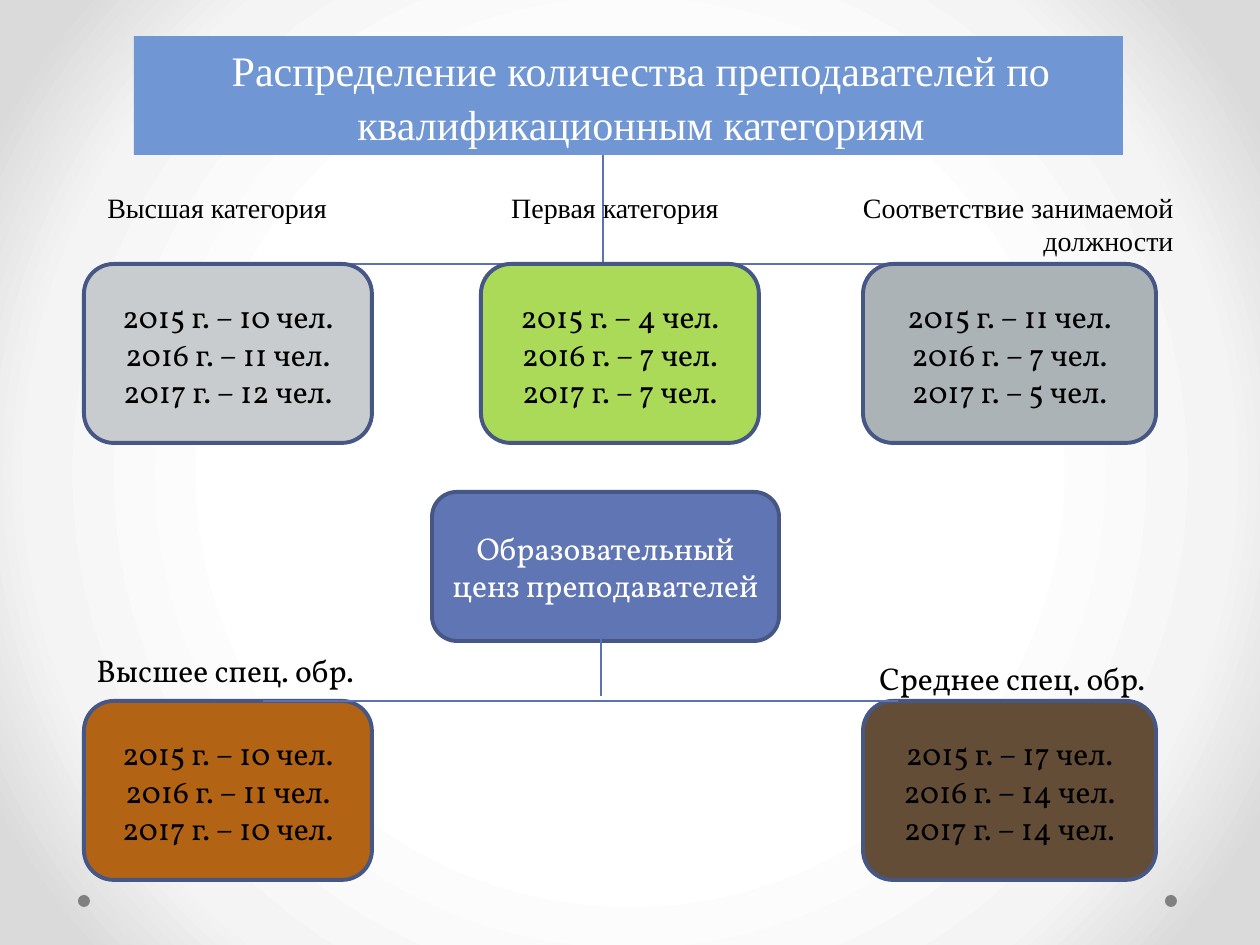
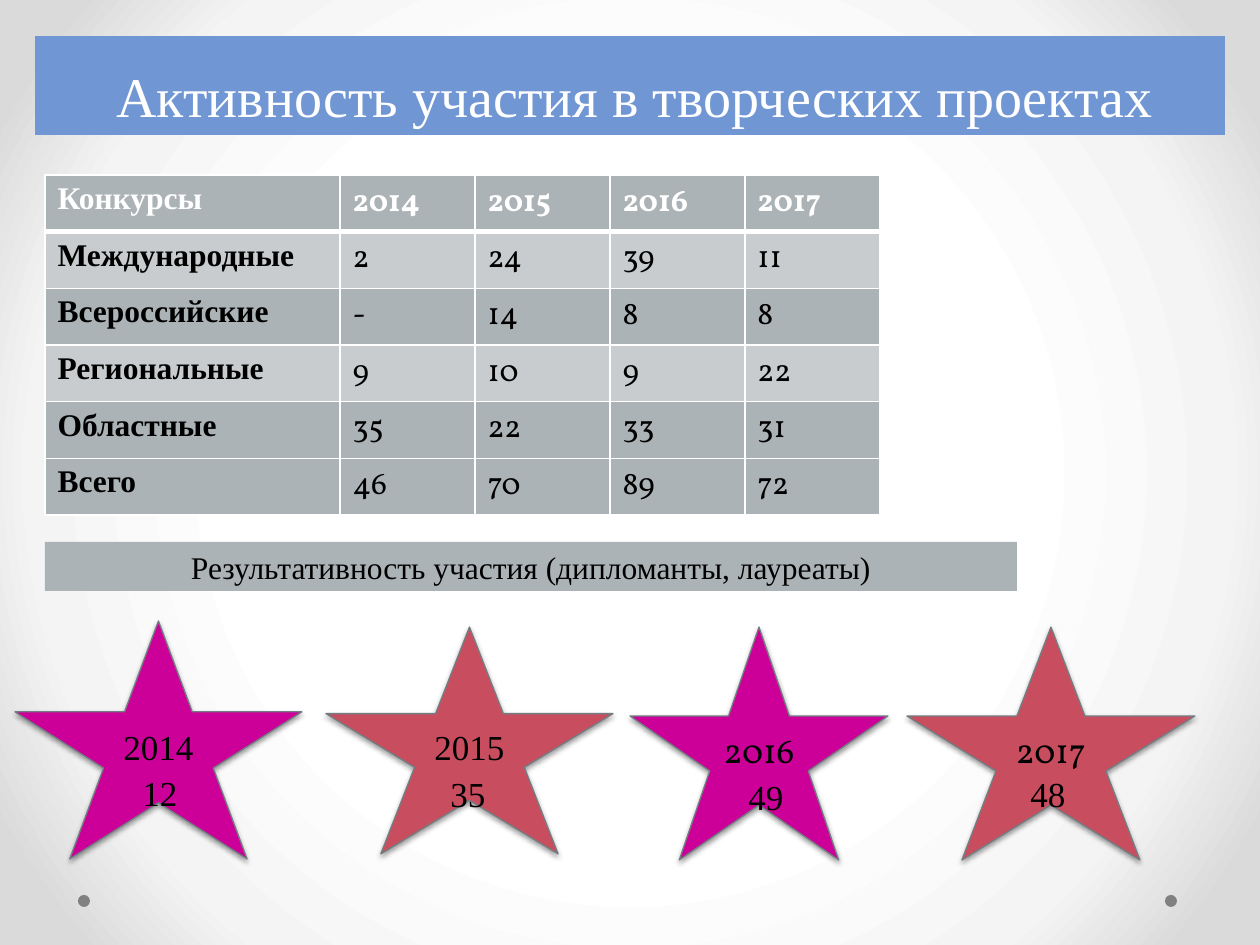
from lxml import etree
from pptx import Presentation
from pptx.dml.color import RGBColor
from pptx.enum.shapes import MSO_CONNECTOR, MSO_SHAPE
from pptx.enum.text import MSO_ANCHOR, MSO_AUTO_SIZE, PP_ALIGN
from pptx.oxml import parse_xml
from pptx.oxml.ns import nsdecls, qn
from pptx.util import Pt

WHITE = RGBColor(0xFF, 0xFF, 0xFF)
BLACK = RGBColor(0x00, 0x00, 0x00)
BAND = RGBColor(0x70, 0x97, 0xD3)
DOT = RGBColor(0x80, 0x80, 0x80)
RULE = RGBColor(0x5C, 0x72, 0xB2)
EDGE = RGBColor(0x47, 0x57, 0x85)
PALE = RGBColor(0xC8, 0xCC, 0xCE)
GRAY = RGBColor(0xAC, 0xB3, 0xB6)
LIME = RGBColor(0xAB, 0xD9, 0x58)
BLUE = RGBColor(0x60, 0x76, 0xB4)
RUST = RGBColor(0xB2, 0x63, 0x14)
BROWN = RGBColor(0x63, 0x4D, 0x36)
PINK = RGBColor(0xCC, 0x00, 0x99)
ROSE = RGBColor(0xC8, 0x4E, 0x5F)
STEEL = RGBColor(0x72, 0x7D, 0x82)

LEFT, CENTER, RIGHT = PP_ALIGN.LEFT, PP_ALIGN.CENTER, PP_ALIGN.RIGHT
TOP, MIDDLE, BOTTOM = MSO_ANCHOR.TOP, MSO_ANCHOR.MIDDLE, MSO_ANCHOR.BOTTOM
FIXED = MSO_AUTO_SIZE.NONE
ROUND, OVAL, STAR = MSO_SHAPE.ROUNDED_RECTANGLE, MSO_SHAPE.OVAL, MSO_SHAPE.STAR_5_POINT
STRAIGHT = MSO_CONNECTOR.STRAIGHT

TIMES, VOLL = "Times New Roman", "Vollkorn"
HEADED, PLAIN = 0, 5


def px(*sizes):
    return [round(size * 914400 / 126) for size in sizes]


class Deck:
    def __init__(self):
        self.prs = Presentation()
        self.prs.slide_width, self.prs.slide_height = px(1260, 945)
        self.slide = None
        self.glow()

    def glow(self):
        master = self.prs.slide_master
        master.background.fill.gradient()
        old = master.element.find(".//" + qn("a:gradFill"))
        stops = "".join(
            f'<a:gs pos="{spot}000"><a:srgbClr val="{tone}"/></a:gs>'
            for spot, tone in ((50, "FFFFFF"), (76, "F4F4F4"), (92, "DADADA")))
        old.getparent().replace(old, parse_xml(
            f'<a:gradFill {nsdecls("a")} rotWithShape="1"><a:gsLst>{stops}</a:gsLst>'
            '<a:path path="circle"><a:fillToRect l="50000" t="50000" r="50000" b="50000"/>'
            '</a:path></a:gradFill>'))

    def page(self, kind):
        self.slide = self.prs.slides.add_slide(self.prs.slide_layouts[kind])
        for left in (78, 1165):
            self.shape(OVAL, (left, 895, 12, 12), DOT)

    def text(self, frame, lines, size, font, color=BLACK, align=CENTER,
             anchor=MIDDLE, wrap=True):
        frame.auto_size = FIXED
        frame.word_wrap = wrap
        frame.vertical_anchor = anchor
        for i, line in enumerate(lines):
            para = frame.add_paragraph() if i else frame.paragraphs[0]
            para.alignment = align
            run = para.add_run()
            run.text = line
            run.font.size, run.font.name = Pt(size), font
            run.font.color.rgb = color

    def holder(self, spot, box, fill):
        item = self.slide.placeholders[spot]
        item.left, item.top, item.width, item.height = px(*box)
        item.fill.solid()
        item.fill.fore_color.rgb = fill
        return item.text_frame

    def title(self, text, box, size, indent):
        frame = self.holder(0, box, BAND)
        self.text(frame, [text], size, TIMES, WHITE, anchor=BOTTOM)
        para = frame.paragraphs[0]
        para.line_spacing = 1.06
        props = para._p.get_or_add_pPr()
        props.set("marL", str(px(indent)[0]))
        props.set("indent", "0")

    def body(self, text, box):
        self.text(self.holder(1, box, GRAY), [text], 18, TIMES, anchor=TOP)

    def shape(self, kind, box, fill, edge=None, width=1.0):
        item = self.slide.shapes.add_shape(kind, *px(*box))
        item.shadow.inherit = False
        item.fill.solid()
        item.fill.fore_color.rgb = fill
        if edge is None:
            item.line.fill.background()
        else:
            item.line.color.rgb = edge
            item.line.width = Pt(width)
        return item

    def card(self, box, fill, lines, color=BLACK):
        item = self.shape(ROUND, box, fill, EDGE, 2.25)
        self.text(item.text_frame, lines, 18, VOLL, color)

    def star(self, box, fill, year, font):
        item = self.shape(STAR, box, fill, STEEL, 0.75)
        effect = item._element.spPr.find(qn("a:effectLst"))
        effect.append(parse_xml(
            f'<a:outerShdw {nsdecls("a")} blurRad="39400" dist="20300" dir="5400000" '
            'rotWithShape="0"><a:srgbClr val="000000"><a:alpha val="38000"/></a:srgbClr>'
            '</a:outerShdw>'))
        self.text(item.text_frame, [year], 20, font)
        item.text_frame.margin_bottom = px(28)[0]

    def rule(self, *ends):
        item = self.slide.shapes.add_connector(STRAIGHT, *px(*ends))
        item.line.color.rgb = RULE
        item.line.width = Pt(0.75)
        etree.SubElement(item._element.spPr, qn("a:effectLst"))

    def label(self, text, box, size, font, align=LEFT, wrap=False):
        item = self.slide.shapes.add_textbox(*px(*box))
        self.text(item.text_frame, [text], size, font, align=align, anchor=TOP, wrap=wrap)

    def border(self, cell, head):
        props = cell._tc.get_or_add_tcPr()
        for i, side in enumerate("LRTB"):
            width = 38100 if head and side == "B" else 12700
            props.insert(i, parse_xml(
                f'<a:ln{side} {nsdecls("a")} w="{width}"><a:solidFill>'
                f'<a:srgbClr val="FFFFFF"/></a:solidFill></a:ln{side}>'))

    def table(self, rows, box, widths, fills):
        grid = self.slide.shapes.add_table(len(rows), len(widths), *px(*box)).table
        grid.horz_banding = False
        for col, width in zip(grid.columns, px(*widths)):
            col.width = width
        for r, row in enumerate(rows):
            for c, text in enumerate(row):
                cell = grid.cell(r, c)
                cell.fill.solid()
                cell.fill.fore_color.rgb = fills[r]
                self.border(cell, r == 0)
                para = cell.text_frame.paragraphs[0]
                run = para.add_run()
                run.text = text
                run.font.size, run.font.name = Pt(18), VOLL if c else TIMES
                run.font.bold = r == 0 or c == 0
                run.font.color.rgb = BLACK if r else WHITE


def counts(*people):
    return [f"{2015 + i} г. – {count} чел." for i, count in enumerate(people)]


def staff(deck):
    deck.page(PLAIN)
    deck.title("Распределение количества преподавателей по квалификационным категориям",
               (134, 36, 989, 119), 24, 25)
    deck.rule(603, 155, 603, 264)
    deck.rule(243, 264, 997, 264)
    deck.card((84, 264, 288, 179), PALE, counts(10, 11, 12))
    deck.card((481, 264, 278, 179), LIME, counts(4, 7, 7))
    deck.card((863, 264, 293, 179), GRAY, counts(11, 7, 5))
    deck.card((432, 492, 347, 149), BLUE, ["Образовательный ценз преподавателей"], WHITE)
    deck.rule(601, 637, 601, 696)
    deck.card((84, 701, 288, 179), RUST, counts(10, 11, 10))
    deck.card((863, 701, 293, 179), BROWN, counts(17, 14, 14))
    deck.rule(263, 701, 898, 701)
    deck.label("Высшая категория", (95, 184, 270, 45), 16, TIMES, wrap=True)
    deck.label("Первая категория", (480, 184, 270, 45), 16, TIMES, CENTER, True)
    deck.label("Соответствие занимаемой должности", (840, 184, 346, 81), 16, TIMES, RIGHT, True)
    deck.label("Высшее спец. обр.", (84, 645, 282, 50), 18, VOLL)
    deck.label("Среднее спец. обр.", (867, 653, 290, 50), 18, VOLL)


def contests(deck):
    deck.page(HEADED)
    deck.title("Активность участия в творческих проектах", (35, 36, 1190, 99), 32, 10)
    deck.body("Результативность участия (дипломанты, лауреаты)", (45, 542, 972, 49))
    rows = [
        ("Конкурсы", "2014", "2015", "2016", "2017"),
        ("Международные", "2", "24", "39", "11"),
        ("Всероссийские", "-", "14", "8", "8"),
        ("Региональные", "9", "10", "9", "22"),
        ("Областные", "35", "22", "33", "31"),
        ("Всего", "46", "70", "89", "72"),
    ]
    deck.table(rows, (45, 175, 835, 340), (295, 135, 135, 135, 135),
               (GRAY, PALE, GRAY, PALE, GRAY, GRAY))
    stars = [
        ("2014", "12", TIMES, PINK, (15, 621, 287, 238), (130, 765)),
        ("2015", "35", TIMES, ROSE, (326, 627, 287, 227), (438, 766)),
        ("2016", "49", VOLL, PINK, (630, 627, 258, 233), (736, 769)),
        ("2017", "48", VOLL, ROSE, (907, 627, 288, 233), (1018, 766)),
    ]
    for year, _, font, fill, box, _ in stars:
        deck.star(box, fill, year, font)
    for _, wins, _, _, _, spot in stars:
        deck.label(wins, (*spot, 60, 55), 20, TIMES)


def main():
    deck = Deck()
    staff(deck)
    contests(deck)
    deck.prs.save("out.pptx")


if __name__ == "__main__":
    main()
